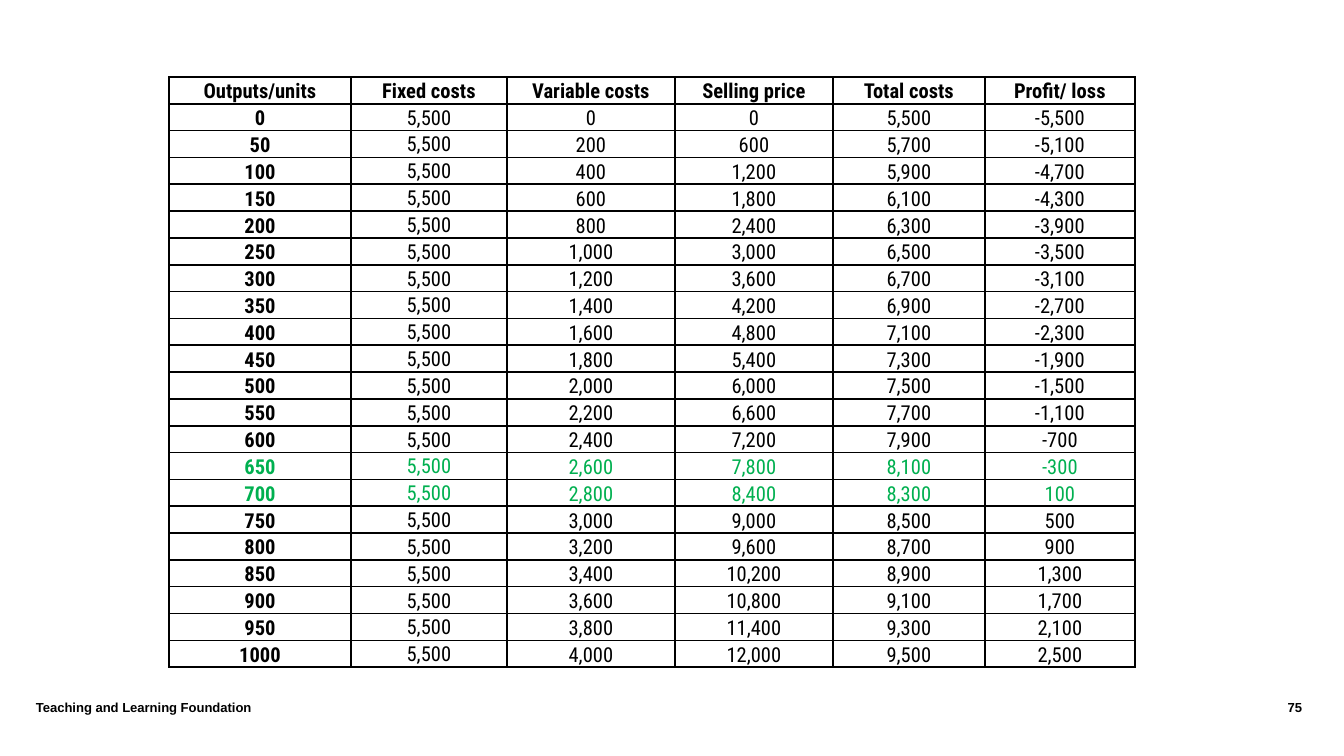
import pptx
import pptx.dml.color
import pptx.enum.text
import pptx.oxml
import pptx.oxml.ns
import pptx.util

ALIGN = pptx.enum.text.PP_ALIGN
ANCHOR = pptx.enum.text.MSO_ANCHOR

HEADINGS = ["Outputs/units", "Fixed costs", "Variable costs",
            "Selling price", "Total costs", "Profit/ loss"]
COLUMN_WIDTHS = [182, 156, 168, 158, 152, 150]
FIXED_COST = 5500
UNIT_COST = 4
UNIT_PRICE = 12
BREAK_EVEN_OUTPUTS = (650, 700)


def px(length):
    """Turn px, at 134.4 to the inch, into EMU."""
    return pptx.util.Inches(length / 134.4)


def color(value):
    return pptx.dml.color.RGBColor.from_string(value)


def cost_row(units):
    """Give the displayed texts for one level of output."""
    variable = UNIT_COST * units
    sales = UNIT_PRICE * units
    total = FIXED_COST + variable
    amounts = [FIXED_COST, variable, sales, total, sales - total]
    return [str(units)] + [f"{amount:,}" for amount in amounts]


class SlideBuilder:
    black = "000000"
    green = "00B050"
    footer_font = "Arial"
    table_font = "Roboto Condensed"

    def __init__(self, slide):
        self.slide = slide

    def set_text(self, para, text, font, size, bold, text_color, align):
        para.text = text
        para.alignment = align
        para.font.name = font
        para.font.size = pptx.util.Pt(size)
        para.font.bold = bold
        para.font.color.rgb = color(text_color)

    def footer(self, text, left, width, align):
        box = self.slide.shapes.add_textbox(px(left), px(700), px(width), px(40))
        frame = box.text_frame
        frame.word_wrap = True
        frame.margin_left = frame.margin_right = 0
        frame.margin_top = frame.margin_bottom = 0
        self.set_text(frame.paragraphs[0], text, self.footer_font, 7, True,
                      self.black, align)

    def border(self, cell):
        """Draw a 1 pt line on all four sides of the cell."""
        properties = cell._tc.get_or_add_tcPr()
        namespace = pptx.oxml.ns.nsdecls("a")
        for index, side in enumerate(("lnL", "lnR", "lnT", "lnB")):
            line = pptx.oxml.parse_xml(
                f'<a:{side} {namespace} w="{pptx.util.Pt(1)}"><a:solidFill>'
                f'<a:srgbClr val="{self.black}"/></a:solidFill></a:{side}>')
            properties.insert(index, line)

    def cell(self, cell, text, bold, text_color, anchor):
        cell.fill.background()
        cell.margin_left = cell.margin_right = px(9)
        cell.margin_top = cell.margin_bottom = 0
        cell.vertical_anchor = anchor
        para = cell.text_frame.paragraphs[0]
        self.set_text(para, text, self.table_font, 11, bold, text_color, ALIGN.CENTER)
        para.line_spacing = 1.07
        para.space_after = pptx.util.Pt(8)
        self.border(cell)

    def table(self, rows, widths, green_rows, left, top, height):
        frame = self.slide.shapes.add_table(
            len(rows), len(widths), px(left), px(top), px(sum(widths)), px(height))
        table = frame.table
        table.first_row = table.horz_banding = False
        for column, width in zip(table.columns, widths):
            column.width = px(width)
        for row_index, row in enumerate(rows):
            text_color = self.green if row_index in green_rows else self.black
            for column_index, text in enumerate(row):
                bold = row_index == 0 or column_index == 0
                anchor = ANCHOR.MIDDLE if column_index == 1 else ANCHOR.BOTTOM
                self.cell(table.cell(row_index, column_index), text, bold,
                          text_color, anchor)


def main():
    deck = pptx.Presentation()
    deck.slide_width = px(1344)
    deck.slide_height = px(756)
    builder = SlideBuilder(deck.slides.add_slide(deck.slide_layouts[6]))

    builder.footer("75", 1169, 133, ALIGN.RIGHT)
    builder.footer("Teaching and Learning Foundation", 36, 1133, ALIGN.LEFT)

    outputs = list(range(0, 1001, 50))
    rows = [HEADINGS] + [cost_row(units) for units in outputs]
    green_rows = [outputs.index(units) + 1 for units in BREAK_EVEN_OUTPUTS]
    builder.table(rows, COLUMN_WIDTHS, green_rows, left=169, top=77, height=591)

    deck.save("out.pptx")


if __name__ == "__main__":
    main()
